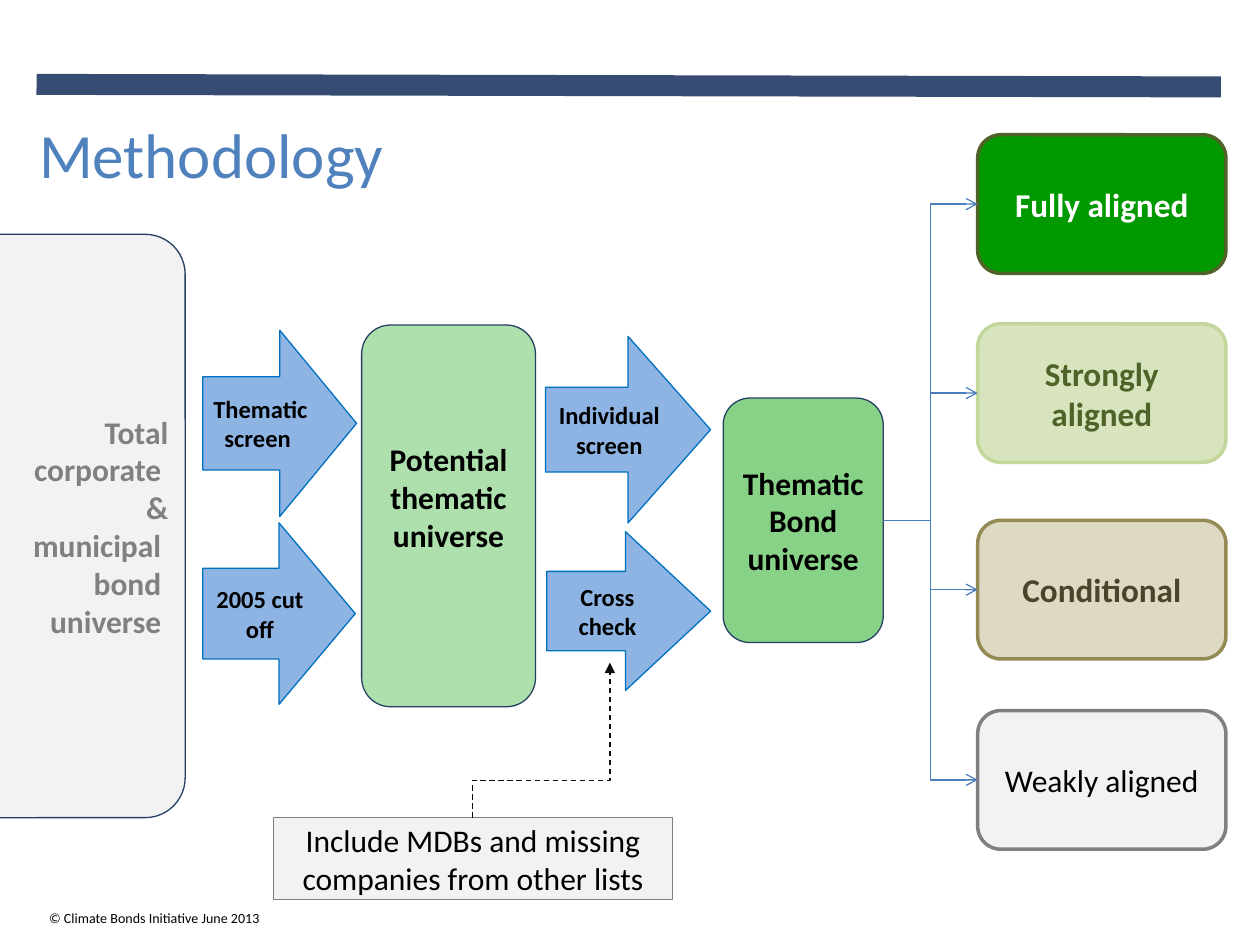
from lxml.etree import SubElement
from pptx import Presentation
from pptx.dml.color import RGBColor
from pptx.enum.dml import MSO_LINE
from pptx.enum.shapes import MSO_CONNECTOR, MSO_SHAPE
from pptx.enum.text import MSO_ANCHOR, PP_ALIGN
from pptx.oxml.ns import qn
from pptx.util import Pt

SCALE = 9144  # EMU in one px, 100 px to the inch
FONT = "Calibri"

BLACK = RGBColor(0x00, 0x00, 0x00)
WHITE = RGBColor(0xFF, 0xFF, 0xFF)
INK = RGBColor(0x0D, 0x0D, 0x0D)
NAVY = RGBColor(0x36, 0x4C, 0x73)
EDGE = RGBColor(0x25, 0x40, 0x61)
BLUE = RGBColor(0x4F, 0x81, 0xBD)
LINK = RGBColor(0x4B, 0x7E, 0xBC)
SKY = RGBColor(0x8E, 0xB4, 0xE3)
AZURE = RGBColor(0x00, 0x70, 0xC0)
PALE = RGBColor(0xF2, 0xF2, 0xF2)
GREY = RGBColor(0x80, 0x80, 0x80)
MINT = RGBColor(0xAE, 0xE0, 0xAE)
LEAF = RGBColor(0x88, 0xD2, 0x88)
GREEN = RGBColor(0x00, 0x99, 0x00)
OLIVE = RGBColor(0x4F, 0x62, 0x28)
LIME = RGBColor(0xD7, 0xE4, 0xBD)
MOSS = RGBColor(0xC3, 0xD6, 0x9B)
SAND = RGBColor(0xDD, 0xD9, 0xC3)
KHAKI = RGBColor(0x94, 0x8A, 0x54)
BROWN = RGBColor(0x4A, 0x45, 0x2A)


def px(*vals):
    return [val * SCALE for val in vals]


class Deck:
    def __init__(self, wide, high):
        self.prs = Presentation()
        self.prs.slide_width, self.prs.slide_height = px(wide, high)
        self.slide = self.prs.slides.add_slide(self.prs.slide_layouts[5])
        self.shapes = self.slide.shapes

    def words(self, frame, lines, size, color, bold=False,
              align=PP_ALIGN.CENTER, pad=(10, 5, 10, 5),
              anchor=MSO_ANCHOR.MIDDLE, wrap=True):
        frame.word_wrap = wrap
        frame.vertical_anchor = anchor
        (frame.margin_left, frame.margin_top,
         frame.margin_right, frame.margin_bottom) = px(*pad)
        for i, line in enumerate(lines):
            para = frame.paragraphs[0] if i == 0 else frame.add_paragraph()
            para.alignment = align
            run = para.add_run()
            run.text = line
            font = run.font
            font.name, font.size, font.bold = FONT, Pt(size), bold
            font.color.rgb = color

    def title(self, text, area):
        head = self.shapes.title
        head.left, head.top, head.width, head.height = px(*area)
        self.words(head.text_frame, [text], 36, BLUE,
                   align=PP_ALIGN.LEFT, wrap=False)

    def label(self, text, area, size):
        box = self.shapes.add_textbox(*px(*area))
        self.words(box.text_frame, [text], size, BLACK, align=PP_ALIGN.LEFT,
                   pad=(8, 5, 10, 5), anchor=MSO_ANCHOR.TOP)

    def box(self, lines, area, fill, edge, size, color=BLACK, bold=True,
            width=0.75, kind=MSO_SHAPE.ROUNDED_RECTANGLE, **style):
        shape = self.shapes.add_shape(kind, *px(*area))
        shape.shadow.inherit = False
        shape.fill.solid()
        shape.fill.fore_color.rgb = fill
        shape.line.color.rgb = edge
        shape.line.width = Pt(width)
        self.words(shape.text_frame, lines, size, color, bold, **style)
        return shape

    def arrow(self, text, area, shaft=0.5, point=0.5):
        shape = self.box([text], area, SKY, AZURE, 14,
                         kind=MSO_SHAPE.RIGHT_ARROW, pad=(2, 4, 2, 4))
        shape.adjustments[0], shape.adjustments[1] = shaft, point

    def line(self, ends, color, width=0.75, kind=MSO_CONNECTOR.STRAIGHT,
             tip=None):
        link = self.shapes.add_connector(kind, *px(*ends))
        link.line.color.rgb = color
        link.line.width = Pt(width)
        props = link._element.spPr
        if tip:
            SubElement(props.find(qn("a:ln")), qn("a:tailEnd"), type=tip)
        SubElement(props, qn("a:effectLst"))
        return link

    def branch(self, start, end):
        ends = (0, 0, 1, 1)
        link = self.line(ends, LINK, kind=MSO_CONNECTOR.ELBOW, tip="arrow")
        link.begin_connect(start, 3)
        link.end_connect(end, 1)

    def riser(self, ends, bend):
        """Elbow turned by 90 degrees, so that it leaves upwards."""
        link = self.line(ends, INK, kind=MSO_CONNECTOR.ELBOW, tip="triangle")
        link.line.dash_style = MSO_LINE.DASH
        props = link._element.spPr
        props.find(qn("a:xfrm")).set("rot", "5400000")
        geom = props.find(qn("a:prstGeom"))
        guides = geom.find(qn("a:avLst"))
        if guides is None:
            guides = SubElement(geom, qn("a:avLst"))
        SubElement(guides, qn("a:gd"), name="adj1", fmla=f"val {bend}")


def main():
    deck = Deck(1000, 750)

    # Header and footer
    deck.line((29, 67, 969, 69), NAVY, 12)
    deck.title("Methodology", (21, 69, 938, 106))
    deck.label("© Climate Bonds Initiative June 2013", (31, 717, 369, 24), 8)

    # Universes, narrowing from left to right
    total = ["Total", "corporate ", "&", "municipal ", "bond ", "universe "]
    deck.box(total, (-43, 186, 190, 463), PALE, EDGE, 18, GREY,
             align=PP_ALIGN.RIGHT, pad=(4, 5, 4, 5))
    deck.box(["Potential thematic universe"], (287, 258, 138, 303),
             MINT, EDGE, 18, pad=(0, 0, 0, 30))
    bond = deck.box(["Thematic Bond universe"], (574, 316, 127, 194),
                    LEAF, EDGE, 18, pad=(0, 0, 0, 0))

    # Screens between the universes
    deck.arrow("Thematic screen ", (161, 262, 122, 148))
    deck.arrow("2005 cut off", (161, 415, 121, 144))
    deck.arrow("Individual screen", (433, 267, 131, 148), shaft=0.455)
    deck.arrow("Cross check", (434, 422, 130, 126), point=0.536)

    # Grades of alignment, each joined to the bond universe
    grades = [
        ("Fully aligned", 107, GREEN, OLIVE, 19, WHITE, True),
        ("Strongly aligned", 257, LIME, MOSS, 19, OLIVE, True),
        ("Conditional", 413, SAND, KHAKI, 19, BROWN, True),
        ("Weakly aligned", 564, PALE, GREY, 18, BLACK, False),
    ]
    for text, top, fill, edge, size, color, bold in grades:
        grade = deck.box([text], (776, top, 197, 110), fill, edge, size,
                         color, bold, width=2)
        deck.branch(bond, grade)

    # Note feeding the cross check
    deck.box(["Include MDBs and missing companies from other lists"],
             (217, 649, 317, 65), PALE, GREY, 18, bold=False,
             kind=MSO_SHAPE.RECTANGLE)
    deck.riser((491, 642, 368, 533), 24100)

    deck.prs.save("out.pptx")


if __name__ == "__main__":
    main()
